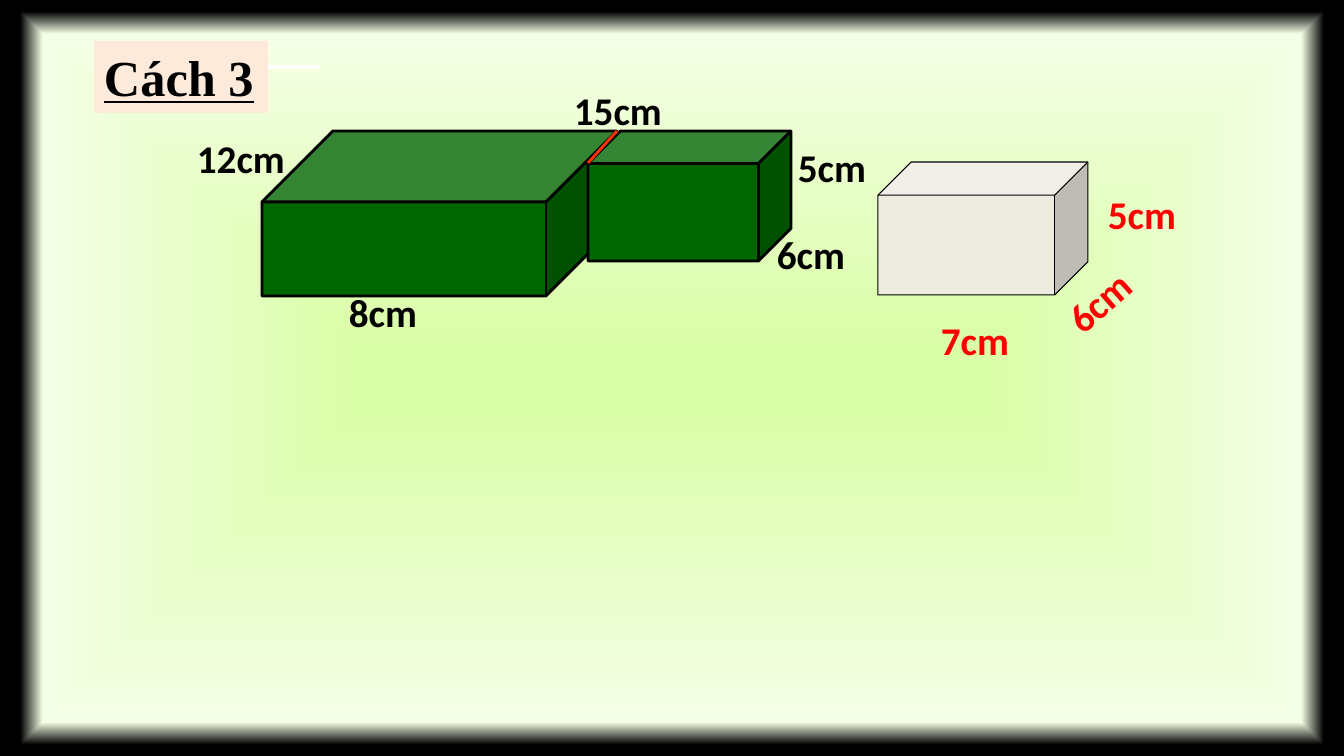
from collections import namedtuple
from dataclasses import dataclass

from lxml.etree import SubElement
from pptx import Presentation
from pptx.dml.color import RGBColor as Color
from pptx.enum.shapes import MSO_CONNECTOR as Connector, MSO_SHAPE as Shape
from pptx.enum.text import MSO_AUTO_SIZE as AutoSize, MSO_ANCHOR as Anchor, PP_ALIGN as Align
from pptx.oxml.ns import qn
from pptx.util import Emu, Pt

Box = namedtuple("Box", "left top width height")


@dataclass(frozen=True)
class Theme:
    black: str = "000000"
    white: str = "FFFFFF"
    red: str = "FF0000"
    seam: str = "FF3300"
    green: str = "006600"
    stone: str = "EEECE1"
    peach: str = "FDEADA"
    backdrop: tuple = ((8, "DAFDA7", 100), (91, "F5FFE7", 100), (97, "000000", 0))
    label_font: str = "Calibri"
    title_font: str = "Times New Roman"
    label_size: int = 28
    title_size: int = 36
    thin: float = 0.75
    thick: float = 2
    rule: float = 2.25


THEME = Theme()
LABEL_HEIGHT = 57


def px(length):
    return Emu(round(length * 914400 / 100.8))


def within(box, left, top, width, height):
    return Box(box.left + left, box.top + top, width, height)


def apply_format(target, values):
    for name, value in values.items():
        setattr(target, name, value)


def paint_backdrop(page):
    fill = page.background.fill
    fill.gradient()
    gradient = page.element.find(".//" + qn("a:gradFill"))
    for child in list(gradient):
        gradient.remove(child)
    gradient.set("rotWithShape", "1")
    stops = SubElement(gradient, qn("a:gsLst"))
    for position, color, opacity in THEME.backdrop:
        stop = SubElement(stops, qn("a:gs"), pos=str(position * 1000))
        tone = SubElement(stop, qn("a:srgbClr"), val=color)
        if opacity < 100:
            SubElement(tone, qn("a:alpha"), val=str(opacity * 1000))
    shading = SubElement(gradient, qn("a:path"), path="shape")
    SubElement(shading, qn("a:fillToRect"), {side: "50000" for side in "ltrb"})


def write_text(shape, text, font):
    frame = shape.text_frame
    apply_format(frame, {"word_wrap": True, "vertical_anchor": Anchor.TOP,
                         "auto_size": AutoSize.SHAPE_TO_FIT_TEXT})
    para = frame.paragraphs[0]
    para.alignment = Align.LEFT
    span = para.add_run()
    span.text = text
    color = font.pop("color")
    apply_format(span.font, {"bold": True, **font})
    span.font.color.rgb = Color.from_string(color)


def add_solid(shapes, kind, box, fill):
    shape = shapes.add_shape(kind, *map(px, box))
    shape.shadow.inherit = False
    shape.fill.solid()
    shape.fill.fore_color.rgb = Color.from_string(fill)
    shape.line.fill.background()
    return shape


def add_cube(shapes, box, depth, fill, weight):
    cube = add_solid(shapes, Shape.CUBE, box, fill)
    cube.adjustments[0] = depth
    cube.line.color.rgb = Color.from_string(THEME.black)
    cube.line.width = Pt(weight)


def add_line(shapes, start, end, color, weight):
    line = shapes.add_connector(Connector.STRAIGHT, *map(px, start + end))
    line.line.color.rgb = Color.from_string(color)
    line.line.width = Pt(weight)
    SubElement(line.element.spPr, qn("a:effectLst"))


def add_labels(shapes, box, labels, color):
    for text, left, top, width, rotation in labels:
        place = within(box, left, top, width, LABEL_HEIGHT)
        label = shapes.add_textbox(*map(px, place))
        label.rotation = rotation
        write_text(label, text, {"name": THEME.label_font, "color": color,
                                 "size": Pt(THEME.label_size)})


def draw_joined_block(page, box):
    shapes = page.shapes.add_group_shape().shapes
    add_cube(shapes, within(box, 75, 50, 355, 165), 0.43, THEME.green, THEME.thick)
    add_cube(shapes, within(box, 401, 50, 203, 130), 0.25, THEME.green, THEME.thick)
    add_line(shapes, (box.left + 401, box.top + 82), (box.left + 430, box.top + 50),
             THEME.seam, THEME.thick)
    add_labels(shapes, box, [
        ("12cm", 0, 48, 151, 0),
        ("15cm", 377, 0, 162, 0),
        ("5cm", 601, 57, 99, 0),
        ("6cm", 580, 144, 92, 0),
        ("8cm", 152, 202, 93, 0),
    ], THEME.black)


def draw_missing_block(page, box):
    shapes = page.shapes.add_group_shape().shapes
    add_cube(shapes, within(box, 0, 0, 210, 133), 0.25, THEME.stone, THEME.thin)
    add_labels(shapes, box, [
        ("7cm", 53, 149, 98, 0),
        ("5cm", 220, 23, 98, 0),
        ("6cm", 171, 96, 133, 318.7),
    ], THEME.red)


def draw_title(page, box):
    add_line(page.shapes, (box.left + 125, box.top + 26), (box.left + 226, box.top + 26),
             THEME.white, THEME.rule)
    title = add_solid(page.shapes, Shape.RECTANGLE, within(box, 0, 0, 174, 72), THEME.peach)
    write_text(title, "Cách 3", {"name": THEME.title_font, "color": THEME.black,
                                 "size": Pt(THEME.title_size), "underline": True})


def main():
    deck = Presentation()
    apply_format(deck, {"slide_width": px(1344), "slide_height": px(756)})
    page = deck.slides.add_slide(deck.slide_layouts[6])
    paint_backdrop(page)
    draw_joined_block(page, Box(187, 81, 700, 259))
    draw_missing_block(page, Box(878, 162, 318, 206))
    draw_title(page, Box(94, 41, 226, 72))
    deck.save("out.pptx")


if __name__ == "__main__":
    main()
